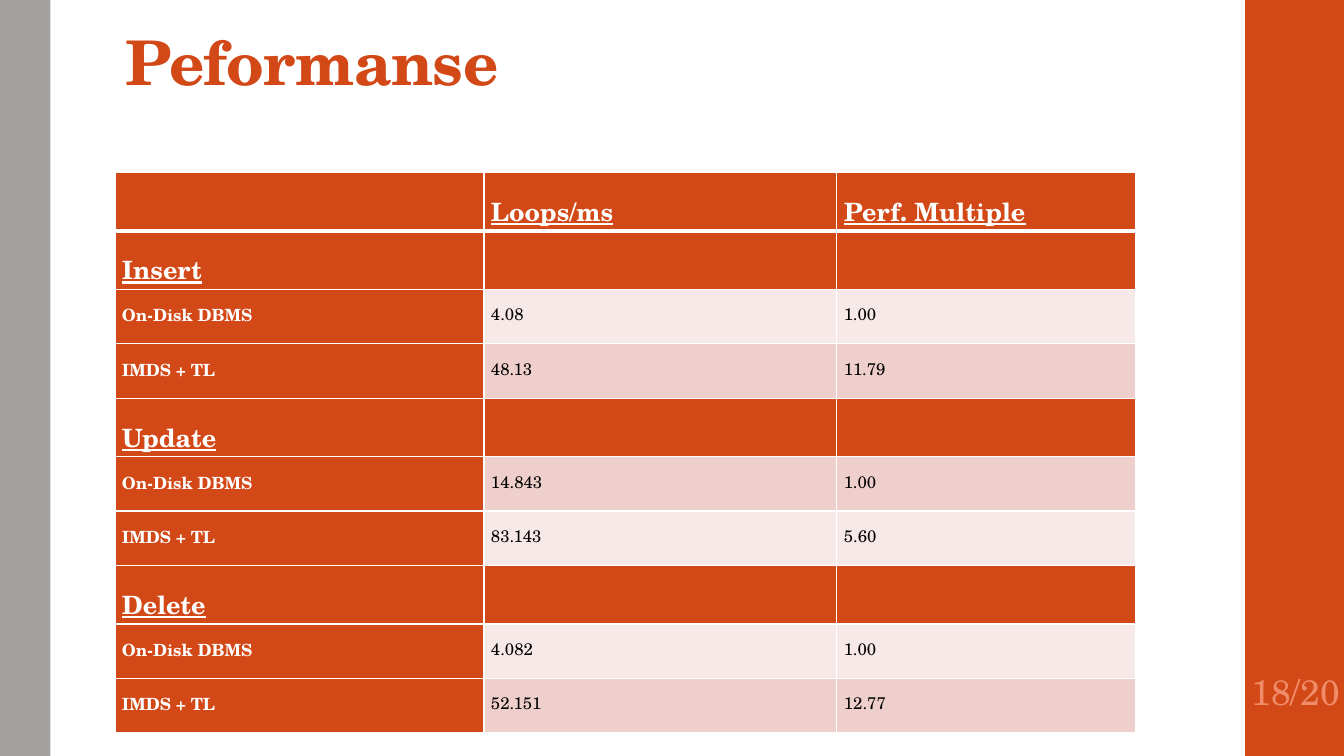
from dataclasses import dataclass

from lxml import etree
from pptx import Presentation
from pptx import util as u
from pptx.dml import color
from pptx.enum import shapes, text
from pptx.oxml import ns

Inches, Pt = u.Inches, u.Pt


@dataclass(frozen=True)
class Theme:
    font: str = "TeX Gyre Schola"
    accent: str = "D34817"
    side_bar: str = "A6A1A1"
    page_number: str = "EF8C6A"
    light_band: str = "F7E9E8"
    dark_band: str = "EFCFCC"
    white: str = "FFFFFF"
    black: str = "000000"
    title_size: float = 44
    heading_size: float = 18
    body_size: float = 12
    page_size: float = 25.2


THEME = Theme()

COLUMN_WIDTHS = [3.66, 3.5, 2.96]
HEADER_HEIGHT, ROW_HEIGHT = 0.46, 0.54
HEADER = ["", "Loops/ms", "Perf. Multiple"]
SECTIONS = {
    "Insert": [("4.08", "1.00"), ("48.13", "11.79")],
    "Update": [("14.843", "1.00"), ("83.143", "5.60")],
    "Delete": [("4.082", "1.00"), ("52.151", "12.77")],
}
SYSTEMS = ["On-Disk DBMS", "IMDS + TL"]


def rgb(value):
    return color.RGBColor.from_string(value)


def set_attributes(target, values):
    for name, value in values.items():
        setattr(target, name, value)


def write_text(frame, wording, size, ink, frame_format, paragraph_format, **font_format):
    set_attributes(frame, {"word_wrap": True, **frame_format})
    paragraph = frame.paragraphs[0]
    set_attributes(paragraph, paragraph_format)
    run = paragraph.add_run()
    run.text = wording
    set_attributes(run.font, {"name": THEME.font, "size": Pt(size), **font_format})
    run.font.color.rgb = rgb(ink)
    return run


def add_bar(slide, box, fill):
    bar = slide.shapes.add_shape(shapes.MSO_SHAPE.RECTANGLE, *map(Inches, box))
    bar.shadow.inherit = False
    bar.fill.solid()
    bar.fill.fore_color.rgb = rgb(fill)
    bar.line.fill.background()


def add_title(slide, box, wording):
    title = slide.shapes.title
    set_attributes(title, dict(zip(("left", "top", "width", "height"), map(Inches, box))))
    run = write_text(
        title.text_frame, wording, THEME.title_size, THEME.accent,
        {"vertical_anchor": text.MSO_ANCHOR.BOTTOM, "auto_size": text.MSO_AUTO_SIZE.NONE,
         "margin_left": Inches(0.1), "margin_right": Inches(0.1),
         "margin_top": Inches(0.03), "margin_bottom": Inches(0.05)},
        {"alignment": text.PP_ALIGN.LEFT, "line_spacing": 0.9},
        bold=True,
    )
    run.font._element.set("spc", "-50")


def set_borders(cell, widths):
    properties = cell._tc.get_or_add_tcPr()
    for side, width in widths.items():
        line = etree.SubElement(properties, ns.qn(f"a:ln{side}"), w=str(Pt(width)))
        fill = etree.SubElement(line, ns.qn("a:solidFill"))
        etree.SubElement(fill, ns.qn("a:srgbClr"), val=THEME.white)


def fill_cell(cell, wording, fill, is_heading, is_value):
    cell.fill.solid()
    cell.fill.fore_color.rgb = rgb(fill)
    if not wording:
        return
    set_attributes(cell, {"margin_left": Inches(0.07), "margin_right": Inches(0.07),
                          "margin_top": 0, "margin_bottom": 0})
    write_text(
        cell.text_frame, wording,
        THEME.heading_size if is_heading else THEME.body_size,
        THEME.black if is_value else THEME.white,
        {}, {"alignment": text.PP_ALIGN.JUSTIFY, "line_spacing": 1.5},
        bold=not is_value, underline=is_heading,
    )


def add_performance_table(slide, box):
    # Each section has a heading row followed by one row per system
    rows = [HEADER]
    for section, results in SECTIONS.items():
        rows.append([section, "", ""])
        rows += [[system, *values] for system, values in zip(SYSTEMS, results)]

    table = slide.shapes.add_table(len(rows), len(HEADER), *map(Inches, box)).table
    set_attributes(table, {"first_row": False, "horz_banding": False})
    for column, width in zip(table.columns, COLUMN_WIDTHS):
        column.width = Inches(width)

    for row_index, values in enumerate(rows):
        table.rows[row_index].height = Inches(ROW_HEIGHT if row_index else HEADER_HEIGHT)
        is_heading = row_index == 0 or values[0] in SECTIONS
        band = THEME.dark_band if row_index % 2 else THEME.light_band
        for column_index, wording in enumerate(values):
            cell = table.cell(row_index, column_index)
            is_value = column_index > 0 and not is_heading
            set_borders(cell, {"L": 1, "R": 1, "T": 3 if row_index == 1 else 1,
                               "B": 3 if row_index == 0 else 1})
            fill_cell(cell, wording, band if is_value else THEME.accent, is_heading, is_value)


def add_page_number(slide, box, wording):
    number = slide.shapes.add_textbox(*map(Inches, box))
    write_text(
        number.text_frame, wording, THEME.page_size, THEME.page_number,
        {"vertical_anchor": text.MSO_ANCHOR.TOP, "margin_top": 0,
         "margin_left": Inches(0.05), "margin_right": Inches(0.05)},
        {"alignment": text.PP_ALIGN.CENTER},
    )


def build_performance_slide(presentation, width, height):
    slide = presentation.slides.add_slide(presentation.slide_layouts[5])
    # Side bars
    add_bar(slide, (width - 0.98, 0, 1, height), THEME.accent)
    add_bar(slide, (0, 0, 0.5, height), THEME.side_bar)
    # Title and results
    add_title(slide, (1.14, -0.5, 10.6, 1.53), "Peformanse")
    add_performance_table(slide, (1.14, 1.71, 10.12, 5.36))
    # Page number
    add_page_number(slide, (width - 0.98, 6.65, 1, 0.65), "18/20")


def main():
    presentation = Presentation()
    width, height = 13.33, 7.5
    set_attributes(presentation, {"slide_width": Inches(width), "slide_height": Inches(height)})
    build_performance_slide(presentation, width, height)
    presentation.save("out.pptx")


if __name__ == "__main__":
    main()
